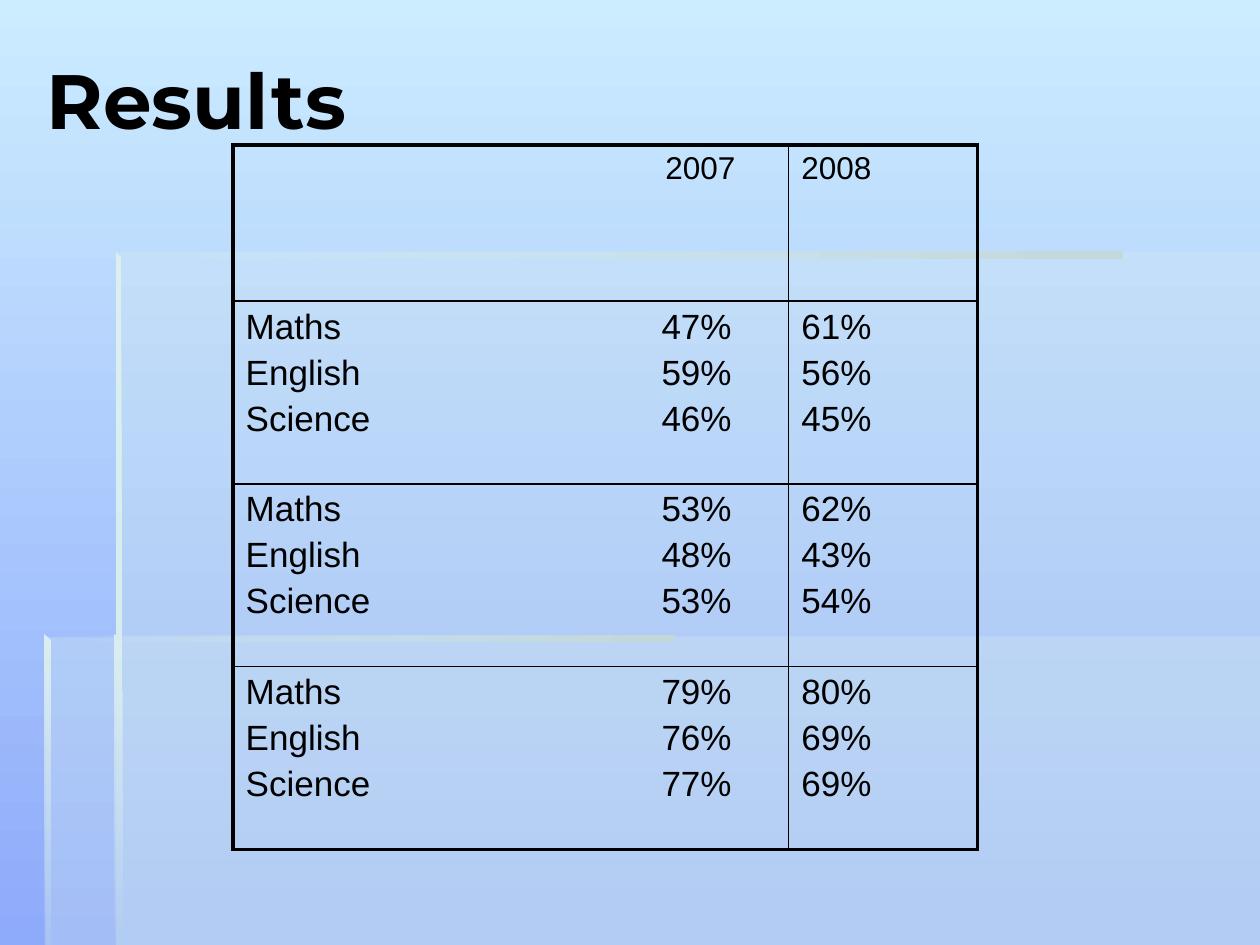
from lxml import etree
from pptx import Presentation
from pptx import util as u
from pptx.dml.color import RGBColor
from pptx.enum import text
from pptx.oxml.ns import qn

BLACK = "000000"
PALE, LIGHT, GREY = "D6EDEE", "DCEFF0", "C4D9DA"
SUBJECTS = ["Maths", "English", "Science"]
RESULTS = [
    (["47%", "59%", "46%"], ["61%", "56%", "45%"]),
    (["53%", "48%", "53%"], ["62%", "43%", "54%"]),
    (["79%", "76%", "77%"], ["80%", "69%", "69%"]),
]


def rgb(value):
    return RGBColor.from_string(value)


def fill_gradient(fill, colors, angle):
    fill.gradient()
    fill.gradient_angle = angle
    for stop, color in zip(fill.gradient_stops, colors):
        stop.color.rgb = rgb(color)


def add_panel(s, points, colors, alphas, angle=0):
    """Outline in inches, with a solid or two-colour fill and opacities in percent."""
    pts = [(u.Inches(x), u.Inches(y)) for x, y in points]
    fb = s.shapes.build_freeform(*pts[0])
    fb.add_line_segments(pts[1:], close=True)
    sp = fb.convert_to_shape()
    sp.shadow.inherit = False
    if len(colors) == 1:
        sp.fill.solid()
        sp.fill.fore_color.rgb = rgb(colors[0])
    else:
        fill_gradient(sp.fill, colors, angle)
    sp.line.fill.background()
    for clr, alpha in zip(sp._element.spPr.iter(qn("a:srgbClr")), alphas):
        if alpha < 100:
            etree.SubElement(clr, qn("a:alpha"), val=str(alpha * 1000))


def box(left, top, right, bottom):
    return [(left, top), (left, bottom), (right, bottom), (right, top)]


def add_backdrop(s):
    fill_gradient(s.background.fill, ["CCECFF", "8EAAFA"], 270)
    # Translucent panels
    add_panel(s, box(0.92, 5.05, 10, 7.5), [PALE], [30])
    add_panel(s, [(0.94, 5.06), (0.36, 5.06), (0.36, 7.5), (10, 7.5), (10, 2), (0.94, 2)],
              [PALE], [30])
    # Bevelled edges
    add_panel(s, box(0.92, 2, 8.91, 2.05), [PALE, GREY], [0, 100])
    add_panel(s, [(0.92, 2), (0.92, 5.1), (0.97, 5.1), (0.96, 2.04)],
              [LIGHT, PALE], [100, 100], 270)
    add_panel(s, [(0.91, 7.5), (0.97, 7.5), (0.96, 5.08), (0.91, 5.04)],
              [LIGHT, PALE], [100, 0], 270)
    add_panel(s, box(0.35, 5.04, 5.35, 5.09), [PALE, GREY], [0, 100])
    add_panel(s, [(0.35, 5.04), (0.35, 7.5), (0.4, 7.5), (0.4, 5.09)],
              [LIGHT, PALE], [100, 10], 270)


def add_run(p, content, size, font, bold=False):
    r = p.add_run()
    r.text = content
    r.font.size = u.Pt(size)
    r.font.name = font
    r.font.bold = bold
    r.font.color.rgb = rgb(BLACK)


def add_title(s, content):
    sp = s.shapes.title
    sp.left, sp.top, sp.width, sp.height = map(u.Inches, (0.27, 0, 9.17, 1.57))
    tf = sp.text_frame
    tf.vertical_anchor = text.MSO_ANCHOR.MIDDLE
    p = tf.paragraphs[0]
    p.alignment = text.PP_ALIGN.LEFT
    add_run(p, content, 44, "Montserrat", True)
    s.shapes._spTree.append(sp._element)  # in front of the backdrop


def set_borders(cell, widths):
    tcPr = cell._tc.get_or_add_tcPr()
    for side, width in zip("LRTB", widths):
        ln = etree.SubElement(tcPr, qn(f"a:ln{side}"), w=str(u.Pt(width)))
        fill = etree.SubElement(ln, qn("a:solidFill"))
        etree.SubElement(fill, qn("a:srgbClr"), val=BLACK)


def fill_cell(cell, lines, size, tab):
    tf = cell.text_frame
    for i, line in enumerate(lines):
        p = tf.add_paragraph() if i else tf.paragraphs[0]
        p.space_before = u.Pt(size * 0.2)
        tabs = etree.SubElement(p._p.get_or_add_pPr(), qn("a:tabLst"))
        etree.SubElement(tabs, qn("a:tab"), pos=str(u.Inches(tab)), algn="l")
        add_run(p, line, size, "Arial")


def add_results(s):
    rows = [(["\t2007"], ["2008"])]
    for first, second in RESULTS:
        rows.append(([f"{n}\t{v}" for n, v in zip(SUBJECTS, first)], second))
    heights = [1.24] + [1.45] * len(RESULTS)
    frame = s.shapes.add_table(len(rows), 2, u.Inches(1.85), u.Inches(1.15),
                               u.Inches(5.91), u.Inches(sum(heights)))
    tbl = frame.table
    tbl.first_row = tbl.horz_banding = False
    for col, width in zip(tbl.columns, (4.41, 1.5)):
        col.width = u.Inches(width)
    last = len(rows) - 1
    for i, row in enumerate(rows):
        tbl.rows[i].height = u.Inches(heights[i])
        for j, lines in enumerate(row):
            cell = tbl.cell(i, j)
            fill_cell(cell, lines, 20 if i else 18, 3.3 if i else 3.33)
            # Thick outside, thin inside
            outer = (j == 0, j == 1, i == 0, i == last)
            set_borders(cell, [2.25 if edge else 1 for edge in outer])
            cell.fill.background()


def main():
    prs = Presentation()
    prs.slide_width, prs.slide_height = u.Inches(10), u.Inches(7.5)
    s = prs.slides.add_slide(prs.slide_layouts[5])
    add_backdrop(s)
    add_title(s, "Results")
    add_results(s)
    prs.save("out.pptx")


if __name__ == "__main__":
    main()
